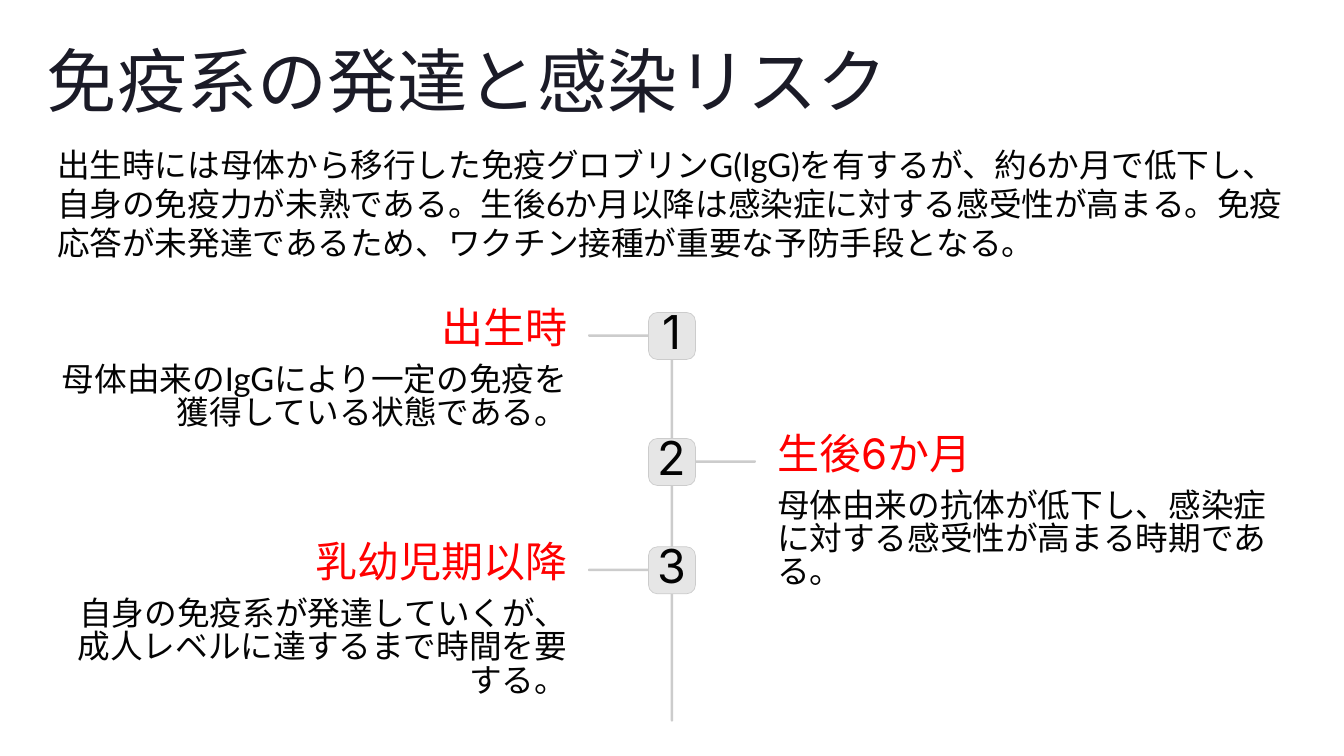
from dataclasses import dataclass

from pptx import Presentation
from pptx.dml.color import RGBColor
from pptx.enum.shapes import MSO_SHAPE as Shape
from pptx.enum.text import MSO_ANCHOR as Anchor, PP_ALIGN as Align
from pptx.util import Inches, Pt

COLUMNS, ROWS = 16, 9
CELL = Inches(1)
AXIS = COLUMNS / 2
NODE = 0.56
RULE = 0.03


@dataclass(frozen=True)
class Theme:
    title_color: str = "1B1B27"
    text_color: str = "030303"
    accent: str = "FF0000"
    rule: str = "CCCCCC"
    node: str = "E6E6E6"
    heading_font: str = "Inter"
    body_font: str = "Lato"
    title_size: int = 60
    number_size: int = 40
    heading_size: int = 36
    body_size: int = 28


THEME = Theme()

TITLE = "免疫系の発達と感染リスク"
SUMMARY = (
    "出生時には母体から移行した免疫グロブリンG(IgG)を有するが、約6か月で低下し、"
    "自身の免疫力が未熟である。生後6か月以降は感染症に対する感受性が高まる。"
    "免疫応答が未発達であるため、ワクチン接種が重要な予防手段となる。"
)
STAGES = [
    (3.72, "出生時", "母体由来のIgGにより一定の免疫を獲得している状態である。"),
    (5.22, "生後6か月", "母体由来の抗体が低下し、感染症に対する感受性が高まる時期である。"),
    (6.51, "乳幼児期以降", "自身の免疫系が発達していくが、成人レベルに達するまで時間を要する。"),
]


def grid(*cells):
    return [round(cell * CELL) for cell in cells]


def beside_axis(gap, width, on_left):
    return AXIS - gap - width if on_left else AXIS + gap


def add_text(slide, text, box, *, size, font=THEME.body_font, color=THEME.text_color,
             align=Align.LEFT, spacing=None, wrap=False):
    frame = slide.shapes.add_textbox(*grid(*box)).text_frame
    frame.margin_left = frame.margin_right = frame.margin_top = frame.margin_bottom = 0
    frame.word_wrap = wrap
    frame.vertical_anchor = Anchor.TOP
    paragraph = frame.paragraphs[0]
    paragraph.alignment = align
    if spacing:
        paragraph.line_spacing = Pt(spacing)
    run = paragraph.add_run()
    run.text = text
    run.font.size = Pt(size)
    run.font.name = font
    run.font.color.rgb = RGBColor.from_string(color)


def add_rounded(slide, box, fill, rounding, outline=None):
    panel = slide.shapes.add_shape(Shape.ROUNDED_RECTANGLE, *grid(*box))
    panel.adjustments[0] = rounding
    panel.shadow.inherit = False
    panel.fill.solid()
    panel.fill.fore_color.rgb = RGBColor.from_string(fill)
    if outline:
        panel.line.color.rgb = RGBColor.from_string(outline)
        panel.line.width = Pt(0.6)
    else:
        panel.line.fill.background()


def add_rule(slide, box):
    add_rounded(slide, box, THEME.rule, 0.5)


def add_stage(slide, number, top, heading, body):
    on_left = number % 2 == 1
    align = Align.RIGHT if on_left else Align.LEFT
    add_rule(slide, (beside_axis(0.25, 0.75, on_left), top + 0.26, 0.75, RULE))
    add_rounded(slide, (AXIS - NODE / 2, top, NODE, NODE), THEME.node, 0.19, THEME.rule)
    add_text(slide, str(number), (AXIS - 0.19, top + 0.18, 0.37, 0.47),
             size=THEME.number_size, font=THEME.heading_font,
             align=Align.CENTER, spacing=26.5)
    add_text(slide, heading, (beside_axis(1.25, 3.12, on_left), top + 0.08, 3.12, 0.39),
             size=THEME.heading_size, font=THEME.heading_font, color=THEME.accent,
             align=align, spacing=28)
    add_text(slide, body, (beside_axis(1.25, 6.05, on_left), top + 0.62, 6.05, 0.8),
             size=THEME.body_size, align=align, spacing=28.5, wrap=True)


def main():
    deck = Presentation()
    deck.slide_width, deck.slide_height = grid(COLUMNS, ROWS)
    slide = deck.slides.add_slide(deck.slide_layouts[6])
    add_text(slide, TITLE, (0.56, 0.67, 10.5, 0.78), size=THEME.title_size,
             font=THEME.heading_font, color=THEME.title_color, spacing=56)
    add_text(slide, SUMMARY, (0.68, 1.72, 14.6, 0.8), size=THEME.body_size, wrap=True)
    add_rule(slide, (AXIS - RULE / 2, STAGES[0][0], RULE, 4.87))
    for number, stage in enumerate(STAGES, start=1):
        add_stage(slide, number, *stage)
    deck.save("out.pptx")


if __name__ == "__main__":
    main()
